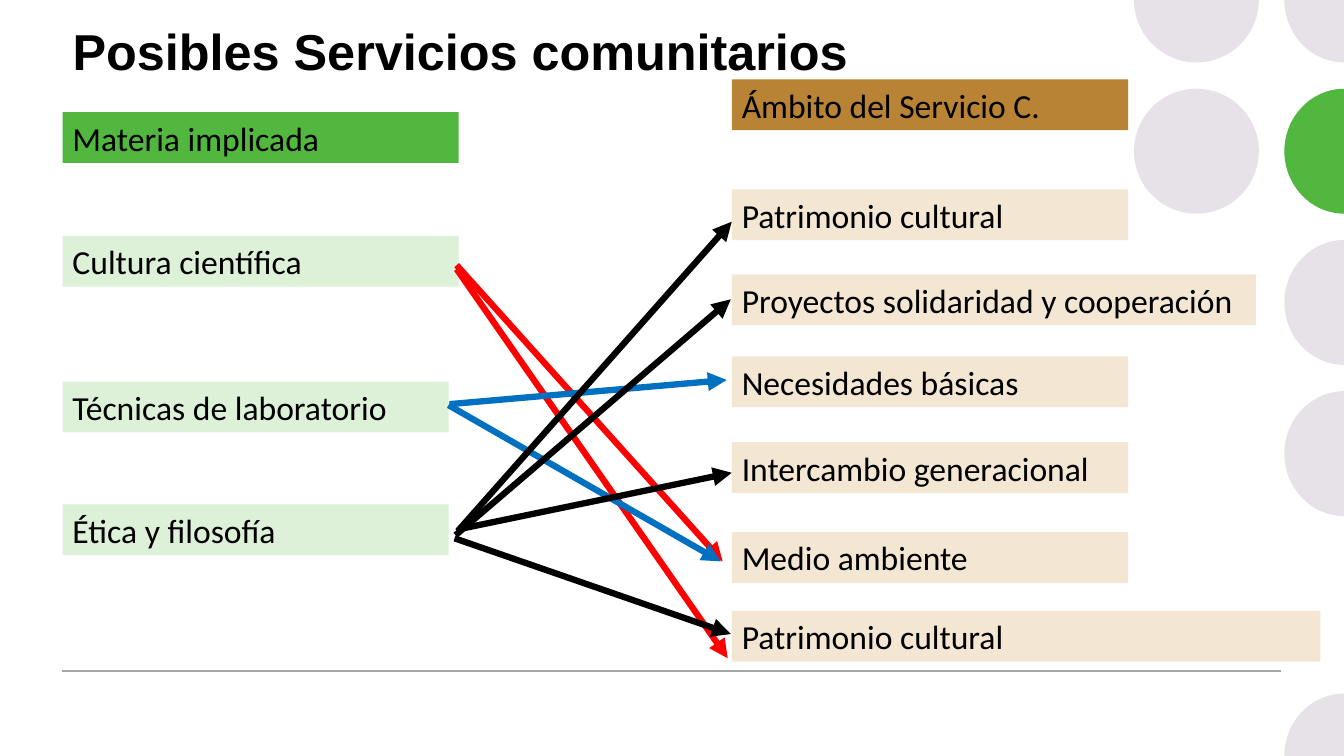
from dataclasses import dataclass

from lxml.etree import SubElement
from pptx import Presentation
from pptx.dml.color import RGBColor
from pptx.enum.shapes import MSO_CONNECTOR as Connector, MSO_SHAPE as Preset
from pptx.enum.text import MSO_ANCHOR as Anchor, MSO_AUTO_SIZE as AutoSize, PP_ALIGN as Align
from pptx.oxml.ns import qn
from pptx.util import Pt


@dataclass(frozen=True)
class Theme:
    green: str = "51B73F"
    pale_green: str = "DCF1D8"
    brown: str = "B88334"
    sand: str = "F3E7D4"
    mauve: str = "E7E2E8"
    grey: str = "A6A6A6"
    red: str = "FF0000"
    blue: str = "0070C0"
    black: str = "000000"
    title_font: str = "Arial"
    title_size: int = 36
    label_font: str = "Calibri"
    label_size: int = 24


theme = Theme()
TITLE = "Posibles Servicios comunitarios"
SUBJECTS = [
    ("Materia implicada", 80.1, 283, theme.green),
    ("Cultura científica", 168.5, 283, theme.pale_green),
    ("Técnicas de laboratorio", 272.6, 275.8, theme.pale_green),
    ("Ética y filosofía", 360.2, 275.8, theme.pale_green),
]
SERVICES = [
    ("Ámbito del Servicio C.", 56.7, 283, theme.brown),
    ("Patrimonio cultural", 135.3, 283, theme.sand),
    ("Proyectos solidaridad y cooperación", 196, 374.3, theme.sand),
    ("Necesidades básicas", 254.5, 283, theme.sand),
    ("Intercambio generacional", 315.8, 283, theme.sand),
    ("Medio ambiente", 380, 283, theme.sand),
    ("Patrimonio cultural", 436.3, 420.3, theme.sand),
]
LINKS = {
    theme.red: [((326.2, 189.4), (516.2, 401)), ((326.2, 192.2), (519.8, 470.2))],
    theme.blue: [((320.4, 289.4), (514.8, 401)), ((321.1, 288.7), (519.1, 271.4))],
    theme.black: [
        ((326.9, 379.4), (522.7, 158.4)),
        ((325.4, 382.3), (522, 213.8)),
        ((324.7, 384.5), (522, 452.9)),
        ((331.2, 377.3), (522.7, 337.7)),
    ],
}
WIDTH, HEIGHT = 960, 540
SUBJECT_LEFT, SERVICE_LEFT, LABEL_HEIGHT = 44.7, 522.8, 36.3
DOT_RADIUS, DOT_STEP, ARC_RATIO = 44.6, 108, 0.55
DOT_COLUMNS = [(854.6, 44.6, [0, 1]), (WIDTH, 42.6, [0, 1, 2, 3, 5])]
GREEN_DOT = (WIDTH, 1)


def paint(shape, colour):
    shape.shadow.inherit = False
    shape.fill.solid()
    shape.fill.fore_color.rgb = RGBColor.from_string(colour)
    shape.line.fill.background()


def write(frame, text, font, size, bold=False):
    frame.text = text
    frame.word_wrap = True
    frame.vertical_anchor = Anchor.MIDDLE
    para = frame.paragraphs[0]
    para.alignment = Align.LEFT
    span = para.runs[0]
    span.font.name, span.font.size, span.font.bold = font, Pt(size), bold
    span.font.color.rgb = RGBColor.from_string(theme.black)


def bend(shape, curves):
    outline = shape._element.find(".//" + qn("a:path"))
    segments = outline.findall(qn("a:lnTo"))
    for first in range(0, 3 * curves, 3):
        curve = SubElement(outline, qn("a:cubicBezTo"))
        segments[first].addprevious(curve)
        for segment in segments[first:first + 3]:
            curve.append(segment[0])
            outline.remove(segment)


def add_dot(page, x, y, radius, colour):
    compass = [(0, -DOT_RADIUS), (-radius, 0), (0, DOT_RADIUS), (radius, 0)]
    seen = [(dx, dy) for dx, dy in compass if 0 <= x + dx <= WIDTH and 0 <= y + dy <= HEIGHT]
    if len(seen) == len(compass):
        dot = page.shapes.add_shape(
            Preset.OVAL, Pt(x - radius), Pt(y - DOT_RADIUS), Pt(2 * radius), Pt(2 * DOT_RADIUS))
    else:
        rim = []
        for (ax, ay), (bx, by) in zip(seen, seen[1:]):
            rim += [(ax + ARC_RATIO * bx, ay + ARC_RATIO * by),
                    (bx + ARC_RATIO * ax, by + ARC_RATIO * ay), (bx, by)]
        start, *rest = [(Pt(x + dx), Pt(y + dy)) for dx, dy in (seen[0], *rim, (0, 0))]
        outline = page.shapes.build_freeform(*start)
        outline.add_line_segments(rest)
        dot = outline.convert_to_shape()
        bend(dot, len(seen) - 1)
    paint(dot, colour)


def add_label(page, left, text, top, width, colour):
    box = page.shapes.add_shape(Preset.RECTANGLE, Pt(left), Pt(top), Pt(width), Pt(LABEL_HEIGHT))
    paint(box, colour)
    write(box.text_frame, text, theme.label_font, theme.label_size)
    box.text_frame.auto_size = AutoSize.SHAPE_TO_FIT_TEXT


def add_line(page, start, end, colour, weight, arrow=False):
    ends = [Pt(value) for value in (*start, *end)]
    line = page.shapes.add_connector(Connector.STRAIGHT, *ends)
    line.line.color.rgb = RGBColor.from_string(colour)
    line.line.width = Pt(weight)
    if arrow:
        SubElement(line.line._get_or_add_ln(), qn("a:tailEnd"), type="triangle")
    SubElement(line._element.spPr, qn("a:effectLst"))


def main():
    deck = Presentation()
    deck.slide_width, deck.slide_height = Pt(WIDTH), Pt(HEIGHT)
    page = deck.slides.add_slide(deck.slide_layouts[5])

    for x, radius, rows in DOT_COLUMNS:
        for row in rows:
            colour = theme.green if (x, row) == GREEN_DOT else theme.mauve
            add_dot(page, x, row * DOT_STEP, radius, colour)
    add_line(page, (44.6, 479.2), (915, 479.2), theme.grey, 1)

    title = page.shapes.title
    title.left, title.top, title.width, title.height = Pt(44.7), Pt(12.2), Pt(577.4), Pt(52.6)
    write(title.text_frame, TITLE, theme.title_font, theme.title_size, bold=True)
    title.text_frame.paragraphs[0].line_spacing = 0.9
    title.text_frame.auto_size = AutoSize.NONE

    for left, labels in ((SUBJECT_LEFT, SUBJECTS), (SERVICE_LEFT, SERVICES)):
        for label in labels:
            add_label(page, left, *label)
    for colour, arrows in LINKS.items():
        for start, end in arrows:
            add_line(page, start, end, colour, 4.5, arrow=True)

    deck.save("out.pptx")


if __name__ == "__main__":
    main()
